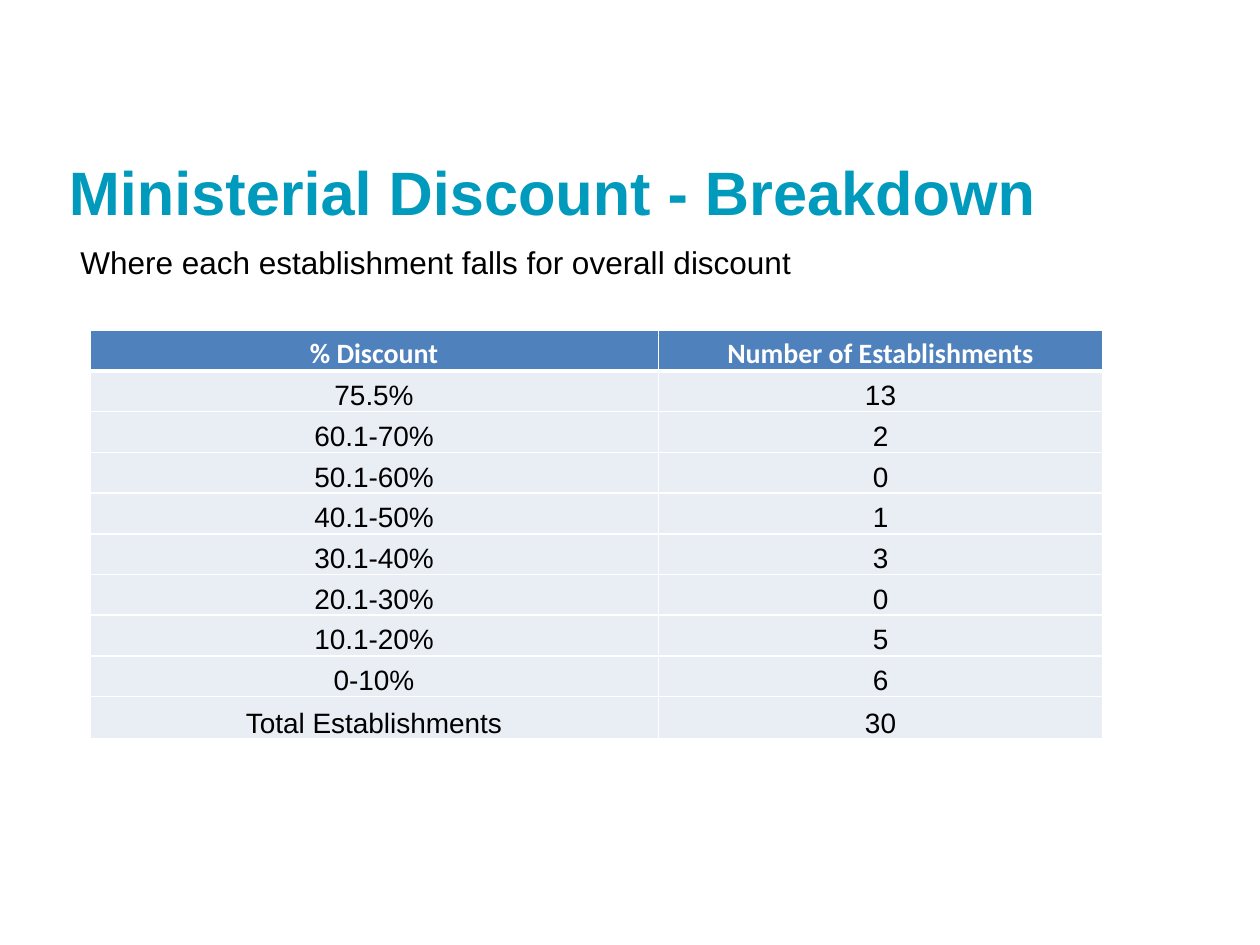
from lxml.etree import SubElement
from pptx import Presentation
from pptx.dml.color import RGBColor
from pptx.enum.text import MSO_ANCHOR, PP_ALIGN
from pptx.oxml.ns import qn
from pptx.util import Cm, Pt

COLORS = {
    "title": "009ABD",
    "text": "000000",
    "header": "4F81BD",
    "body": "E9EDF4",
    "white": "FFFFFF",
}

DISCOUNTS = [
    ("% Discount", "Number of Establishments"),
    ("75.5%", "13"),
    ("60.1-70%", "2"),
    ("50.1-60%", "0"),
    ("40.1-50%", "1"),
    ("30.1-40%", "3"),
    ("20.1-30%", "0"),
    ("10.1-20%", "5"),
    ("0-10%", "6"),
    ("Total Establishments", "30"),
]


class SlideBuilder:
    """Holds the text style and the slide being filled."""

    font = "Arial"
    header_font = "Calibri"
    table_size = 16

    def __init__(self, slide):
        self.slide = slide

    def format_runs(self, tf, size, color, bold=False, font=None):
        for p in tf.paragraphs:
            for r in p.runs:
                r.font.name = font or self.font
                r.font.size = Pt(size)
                r.font.bold = bold
                r.font.color.rgb = RGBColor.from_string(COLORS[color])

    def text(self, text, left, top, width, height, size, color,
             bold=False, wrap=True, anchor=MSO_ANCHOR.TOP):
        box = self.slide.shapes.add_textbox(Cm(left), Cm(top), Cm(width), Cm(height))
        tf = box.text_frame
        tf.word_wrap = wrap
        tf.vertical_anchor = anchor
        tf.text = text
        self.format_runs(tf, size, color, bold)

    def borders(self, cell, bottom):
        """Draw white cell borders, 1 pt except for the bottom one."""
        tc_pr = cell._tc.get_or_add_tcPr()
        for side, width in (("L", 1), ("R", 1), ("T", 1), ("B", bottom)):
            ln = SubElement(tc_pr, qn(f"a:ln{side}"), w=str(Pt(width)))
            fill = SubElement(ln, qn("a:solidFill"))
            SubElement(fill, qn("a:srgbClr"), val=COLORS["white"])

    def cell(self, cell, text, is_header, below_header):
        self.borders(cell, bottom=3 if is_header else 1)
        if below_header:
            cell._tc.tcPr.find(qn("a:lnT")).set("w", str(Pt(3)))
        cell.fill.solid()
        cell.fill.fore_color.rgb = RGBColor.from_string(
            COLORS["header" if is_header else "body"])
        cell.margin_left = cell.margin_right = 0
        cell.margin_top = cell.margin_bottom = 0
        cell.vertical_anchor = MSO_ANCHOR.BOTTOM
        tf = cell.text_frame
        tf.text = text
        tf.paragraphs[0].alignment = PP_ALIGN.CENTER
        if is_header:
            self.format_runs(tf, self.table_size, "white", True, self.header_font)
        else:
            self.format_runs(tf, self.table_size, "text")

    def table(self, rows, left, top, col_widths, row_heights):
        frame = self.slide.shapes.add_table(
            len(rows), len(col_widths), Cm(left), Cm(top),
            Cm(sum(col_widths)), Cm(sum(row_heights)))
        table = frame.table
        table.horz_banding = False
        for column, width in zip(table.columns, col_widths):
            column.width = Cm(width)
        for i, (row, height) in enumerate(zip(rows, row_heights)):
            table.rows[i].height = Cm(height)
            for j, value in enumerate(row):
                self.cell(table.cell(i, j), value, i == 0, i == 1)


def main():
    prs = Presentation()
    prs.slide_width, prs.slide_height = Cm(25.4), Cm(19.05)
    s = SlideBuilder(prs.slides.add_slide(prs.slide_layouts[6]))

    s.text("Ministerial Discount - Breakdown", 1.14, 2.92, 21.08, 1.88,
           35, "title", bold=True, anchor=MSO_ANCHOR.MIDDLE)
    s.table(DISCOUNTS, 1.81, 6.66, col_widths=[11.46, 8.96],
            row_heights=[0.82] * (len(DISCOUNTS) - 1) + [0.86])
    s.text("Where each establishment falls for overall discount",
           1.37, 4.78, 14.99, 1.02, 18, "text", wrap=False)

    prs.save("out.pptx")


if __name__ == "__main__":
    main()
